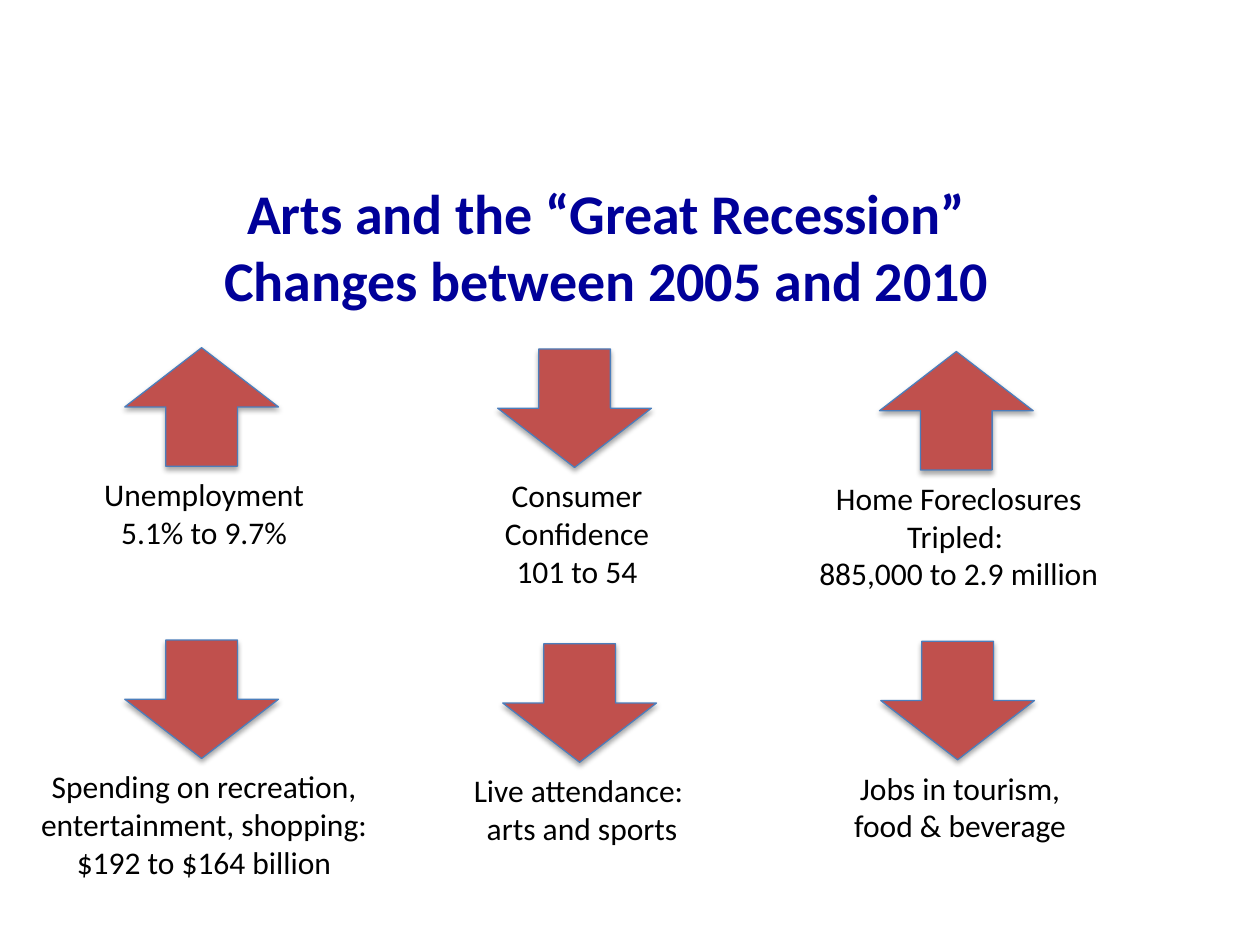
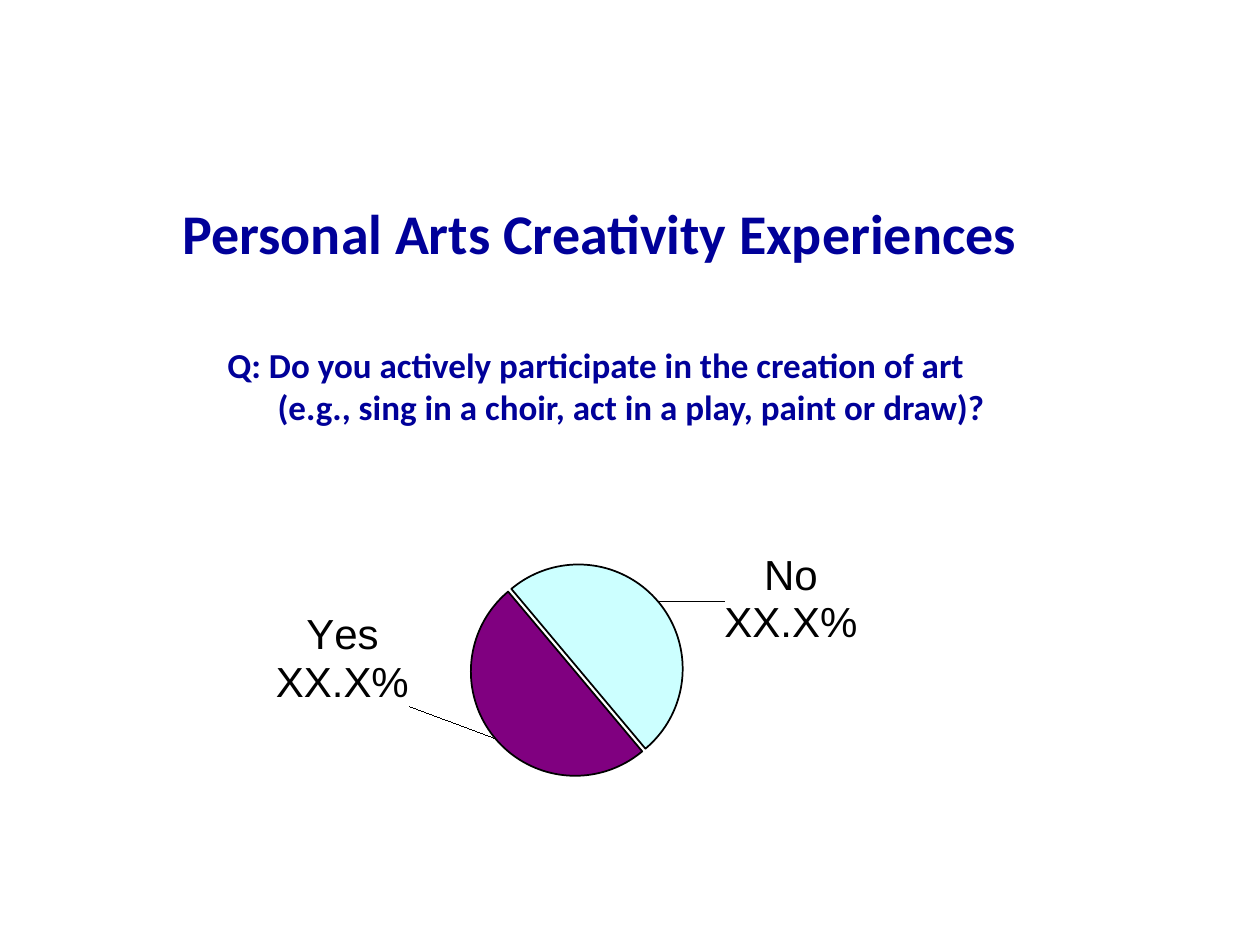
from lxml.etree import SubElement
from pptx import Presentation
from pptx.chart.data import CategoryChartData
from pptx.dml.color import RGBColor
from pptx.enum.chart import XL_CHART_TYPE, XL_LABEL_POSITION
from pptx.enum.shapes import MSO_SHAPE
from pptx.enum.text import MSO_ANCHOR, PP_ALIGN
from pptx.oxml import parse_xml
from pptx.oxml.ns import nsdecls, qn
from pptx.util import Inches, Pt

NAVY = RGBColor(0x00, 0x00, 0x99)
BLACK = RGBColor(0x00, 0x00, 0x00)
RED = RGBColor(0xC0, 0x50, 0x4D)
BLUE = RGBColor(0x4B, 0x7E, 0xBC)
PURPLE = RGBColor(0x80, 0x00, 0x80)
PALE_CYAN = RGBColor(0xCC, 0xFF, 0xFF)

FONT = "Calibri"
UP, DOWN = MSO_SHAPE.UP_ARROW, MSO_SHAPE.DOWN_ARROW

# Title lines: text, size, space before, left margin (points)
RECESSION_TITLE = [
    ("Arts and the “Great Recession”", 32, 0, 0),
    ("Changes between 2005 and 2010", 32, 0, 0),
]
CREATIVITY_TITLE = [
    ("Personal Arts Creativity Experiences", 32, 0, 0),
    ("Q: Do you actively participate in the creation of art ", 20, 44, 0),
    ("(e.g., sing in a choir, act in a play, paint or draw)?", 20, 0, 36),
]

# Arrow, grid column, row, nudge right and down, caption width, caption lines
CHANGES = [
    (UP, 0, 0, 0, 0, 1.96, ["Unemployment", "5.1% to 9.7%"]),
    (DOWN, 1, 0, -0.04, 0.01, 1.96, ["Consumer Confidence", "101 to 54"]),
    (UP, 2, 0, -0.01, 0.03, 2.67,
     ["Home Foreclosures Tripled: ", "885,000 to 2.9 million"]),
    (DOWN, 0, 1, 0, 0, 3.03,
     ["Spending on recreation, entertainment, shopping:", "$192 to $164 billion"]),
    (DOWN, 1, 1, 0, 0.03, 2.27, ["Live attendance: ", "arts and sports"]),
    (DOWN, 2, 1, 0, 0.01, 2.27, ["Jobs in tourism, food & beverage"]),
]
FIRST_CENTRE, COLUMN_PITCH = 1.6, 3.0
FIRST_TOP, ROW_PITCH = 2.76, 2.32
ARROW_W, ARROW_H = 1.22, 0.94
CAPTION_DROP, CAPTION_SHIFT = 0.96, 0.02

# Answer, value, colour, label shift as shares of the chart
ANSWERS = [
    ("Yes", 50, PURPLE, (-0.08, -0.29)),
    ("No", 50, PALE_CYAN, (0.06, 0.11)),
]
PLACEHOLDER = "XX.X%"
PIE_AREA = {"x": 0.333, "y": 0.231, "w": 0.256, "h": 0.46}


def add_text(slide, box, lines, color, bold=False, anchor=MSO_ANCHOR.TOP):
    """Centred text; each line is (text, size, space before, left margin)."""
    tf = slide.shapes.add_textbox(*map(Inches, box)).text_frame
    tf.word_wrap = True
    tf.vertical_anchor = anchor
    for i, (text, size, before, margin) in enumerate(lines):
        p = tf.add_paragraph() if i else tf.paragraphs[0]
        p.alignment = PP_ALIGN.CENTER
        if before:
            p.space_before = Pt(before)
        if margin:
            p._p.get_or_add_pPr().set("marL", str(Pt(margin)))
        r = p.add_run()
        r.text = text
        r.font.name, r.font.size, r.font.bold = FONT, Pt(size), bold
        r.font.color.rgb = color


def add_title(slide, box, lines):
    add_text(slide, box, lines, NAVY, True, MSO_ANCHOR.MIDDLE)


def add_arrow(slide, kind, centre, top):
    sp = slide.shapes.add_shape(kind, Inches(centre - ARROW_W / 2), Inches(top),
                                Inches(ARROW_W), Inches(ARROW_H))
    sp.adjustments[0], sp.adjustments[1] = 0.466, 0.5
    sp.fill.solid()
    sp.fill.fore_color.rgb = RED
    sp.line.color.rgb = BLUE
    sp.line.width = Pt(0.75)
    sp.shadow.inherit = False
    effects = sp._element.spPr.find(qn("a:effectLst"))
    effects.append(parse_xml(
        f'<a:outerShdw {nsdecls("a")} blurRad="{Pt(3.1)}" dist="{Pt(1.8)}" '
        'dir="5400000" rotWithShape="0"><a:srgbClr val="000000">'
        '<a:alpha val="35000"/></a:srgbClr></a:outerShdw>'))


def manual_layout(**values):
    layout = parse_xml(f'<c:layout {nsdecls("c")}><c:manualLayout/></c:layout>')
    for tag, value in values.items():
        SubElement(layout[0], qn(f"c:{tag}")).set("val", str(value))
    return layout


def add_answer_pie(slide):
    data = CategoryChartData()
    data.categories = [str(i + 1) for i in range(len(ANSWERS))]
    data.add_series("Series 1", [value for _, value, _, _ in ANSWERS])
    chart = slide.shapes.add_chart(XL_CHART_TYPE.PIE, Inches(0.89), Inches(3.66),
                                   Inches(8), Inches(3.6), data).chart
    chart.has_legend = chart.has_title = False
    chart.font.name, chart.font.size = "Arial", Pt(24)
    chart.font.color.rgb = BLACK

    area = chart._chartSpace.chart.plotArea
    for old in area.findall(qn("c:layout")):
        area.remove(old)
    area.insert(0, manual_layout(layoutTarget="inner", xMode="edge",
                                 yMode="edge", **PIE_AREA))
    plot = chart.plots[0]
    plot.vary_by_categories = True
    pie = plot._element
    for old in pie.findall(qn("c:firstSliceAng")):
        pie.remove(old)
    SubElement(pie, qn("c:firstSliceAng")).set("val", "140")

    series = plot.series[0]
    for i, (answer, _, color, (dx, dy)) in enumerate(ANSWERS):
        point = series.points[i]
        point.format.fill.solid()
        point.format.fill.fore_color.rgb = color
        point.format.line.color.rgb = BLACK
        point.format.line.width = Pt(1)
        label = point.data_label
        tf = label.text_frame
        for j, text in enumerate((answer, PLACEHOLDER)):
            p = tf.add_paragraph() if j else tf.paragraphs[0]
            r = p.add_run()
            r.text = text
            r.font.name, r.font.size, r.font.bold = "Arial", Pt(24), False
            r.font.color.rgb = BLACK
        label.position = XL_LABEL_POSITION.OUTSIDE_END
        dLbl = series._element.find(qn("c:dLbls")).findall(qn("c:dLbl"))[i]
        dLbl.insert(1, manual_layout(x=dx, y=dy))
    for dPt in series._element.findall(qn("c:dPt")):
        explosion = dPt.makeelement(qn("c:explosion"), {"val": "2"})
        dPt.find(qn("c:spPr")).addprevious(explosion)


def build_recession(slide):
    add_title(slide, (0, 1.43, 9.63, 1.04), RECESSION_TITLE)
    for kind, column, row, dx, dy, width, lines in CHANGES:
        centre = FIRST_CENTRE + column * COLUMN_PITCH + dx
        top = FIRST_TOP + row * ROW_PITCH + dy
        add_arrow(slide, kind, centre, top)
        box = (centre + CAPTION_SHIFT - width / 2, top + CAPTION_DROP, width,
               0.71 if len(lines[0]) < 18 else 1.01)
        add_text(slide, box, [(line, 18, 0, 0) for line in lines], BLACK)


def build_creativity(slide):
    add_title(slide, (0, 1.86, 9.52, 1.25), CREATIVITY_TITLE)
    add_answer_pie(slide)


def main():
    prs = Presentation()
    prs.slide_width, prs.slide_height = Inches(10), Inches(7.5)
    for build in (build_recession, build_creativity):
        build(prs.slides.add_slide(prs.slide_layouts[6]))
    prs.save("out.pptx")


if __name__ == "__main__":
    main()
